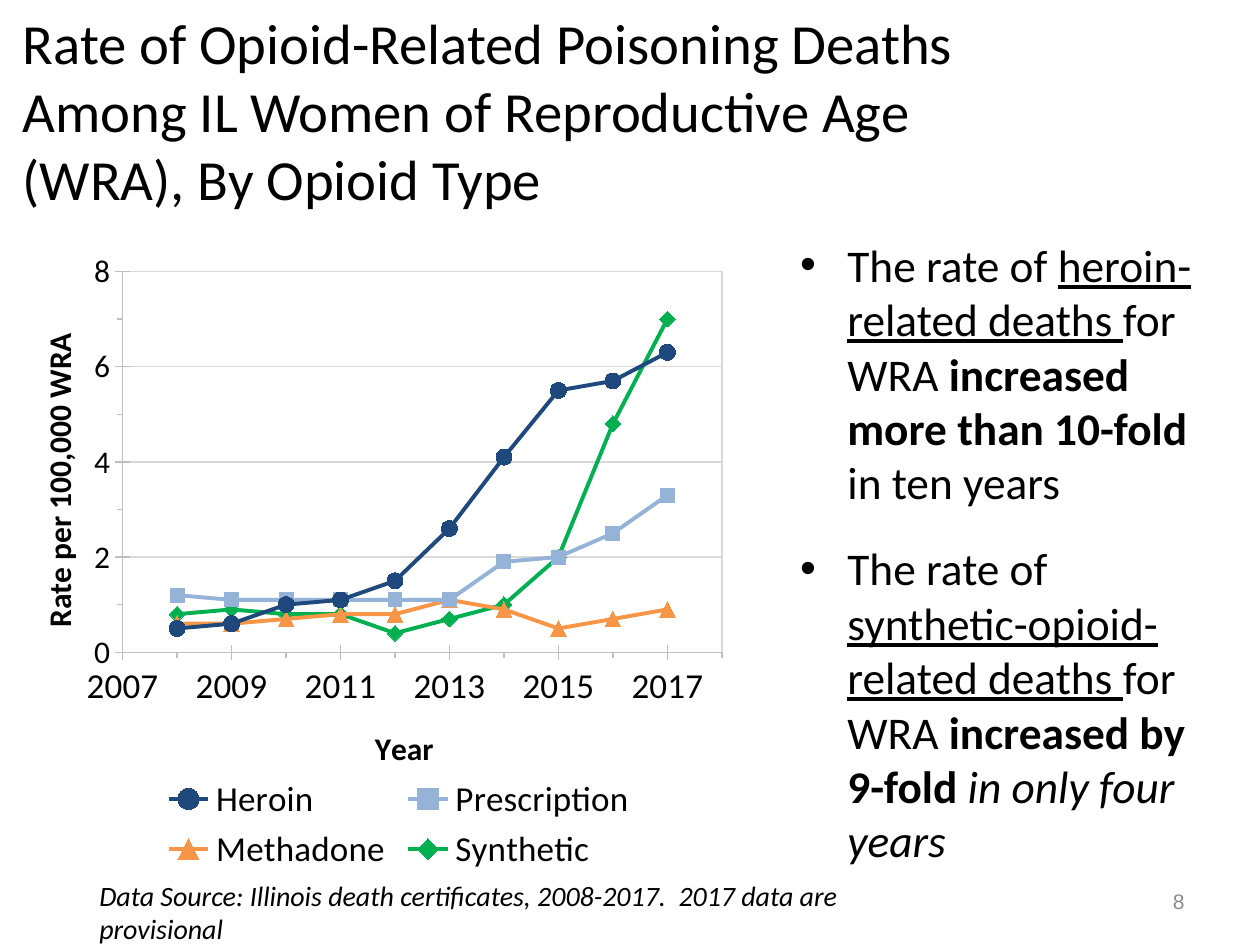
"""Build a slide on opioid poisoning death rates with a scatter chart and two findings."""
from lxml import etree
from pptx import Presentation, util as u
from pptx.chart.data import XyChartData
from pptx.dml.color import RGBColor
from pptx.enum import chart as ch, text
from pptx.oxml import parse_xml

NS = ('xmlns:c="http://schemas.openxmlformats.org/drawingml/2006/chart" '
      'xmlns:a="http://schemas.openxmlformats.org/drawingml/2006/main"')


def style(font, size, color="000000", name="Calibri", **flags):
    font.size, font.name = u.Pt(size), name
    font.color.rgb = RGBColor.from_string(color)
    for flag, value in flags.items():
        setattr(font, flag, value)


def write(paragraph, words, size, **format):
    run = paragraph.add_run()
    run.text = words
    style(run.font, size, **format)


deck = Presentation()
deck.slide_width, deck.slide_height = u.Inches(10), u.Inches(7.5)
slide = deck.slides.add_slide(deck.slide_layouts[1])
heading, findings = slide.placeholders
source = slide.shapes.add_textbox(0, 0, 0, 0)
number = slide.shapes.add_textbox(0, 0, 0, 0)

for part, place in ((heading, (0.08, 0.25, 9, 1.25)), (findings, (6.25, 1.83, 3.39, 4.9)),
                    (source, (0.69, 6.92, 6.37, 0.44)), (number, (7.17, 6.95, 2.33, 0.4))):
    part.left, part.top, part.width, part.height = map(u.Inches, place)
    part.text_frame.word_wrap = True
    part.text_frame.auto_size = text.MSO_AUTO_SIZE.NONE

headline = heading.text_frame.paragraphs[0]
headline.alignment = text.PP_ALIGN.LEFT
heading.text_frame.vertical_anchor = text.MSO_ANCHOR.MIDDLE
for row, words in enumerate(("Rate of Opioid-Related Poisoning Deaths ",
                             "Among IL Women of Reproductive Age ",
                             "(WRA), By Opioid Type")):
    if row:
        headline.add_line_break()
    write(headline, words, 32.4)

points = (
    (("The rate of ", {}), ("heroin-related deaths ", {"underline": True}), ("for WRA ", {}),
     ("increased more than 10-fold ", {"bold": True}), ("in ten years", {})),
    (("The rate of ", {}), ("synthetic-opioid-related deaths ", {"underline": True}),
     ("for WRA ", {}), ("increased by 9-fold ", {"bold": True}),
     ("in only four years", {"italic": True})),
)
for order, point in enumerate(points):
    finding = findings.text_frame.paragraphs[0] if order == 0 else findings.text_frame.add_paragraph()
    finding.space_before = u.Pt(18 * order)
    for words, format in point:
        write(finding, words, 25.9, **format)

write(source.text_frame.paragraphs[0],
      "Data Source: Illinois death certificates, 2008-2017.  2017 data are provisional",
      16, italic=True)
page = number.text_frame.paragraphs[0]
page.alignment = text.PP_ALIGN.RIGHT
number.text_frame.vertical_anchor = text.MSO_ANCHOR.MIDDLE
write(page, "8", 12, color="8C8C8C", name="Arial")

marks = ch.XL_MARKER_STYLE
opioids = (
    ("Heroin", "1F497D", marks.CIRCLE, 9, (0.5, 0.6, 1, 1.1, 1.5, 2.6, 4.1, 5.5, 5.7, 6.3)),
    ("Prescription", "95B3D7", marks.SQUARE, 8, (1.2, 1.1, 1.1, 1.1, 1.1, 1.1, 1.9, 2, 2.5, 3.3)),
    ("Methadone", "F79646", marks.TRIANGLE, 9, (0.6, 0.6, 0.7, 0.8, 0.8, 1.1, 0.9, 0.5, 0.7, 0.9)),
    ("Synthetic", "00B050", marks.DIAMOND, 9, (0.8, 0.9, 0.8, 0.8, 0.4, 0.7, 1, 2, 4.8, 7)),
)
rates = XyChartData()
for name, _, _, _, values in opioids:
    series = rates.add_series(name)
    for year, rate in enumerate(values, 2008):
        series.add_data_point(year, rate)
chart = slide.shapes.add_chart(ch.XL_CHART_TYPE.XY_SCATTER_LINES, u.Inches(0.25), u.Inches(1.82),
                               u.Inches(5.83), u.Inches(5.15), rates).chart
style(chart.font, 20)
chart.has_title = False
chart.has_legend = True
chart.legend.position = ch.XL_LEGEND_POSITION.BOTTOM
chart.legend.include_in_layout = False
style(chart.legend.font, 20)
chart.plots[0].vary_by_categories = False

for series, (_, color, mark, size, _) in zip(chart.plots[0].series, opioids):
    series.smooth = False
    series.format.line.width = u.Pt(2.25)
    series.marker.style, series.marker.size = mark, size
    series.marker.format.fill.solid()
    for paint in (series.format.line.color, series.marker.format.fill.fore_color,
                  series.marker.format.line.color):
        paint.rgb = RGBColor.from_string(color)

for axis, label, low, high, size in ((chart.category_axis, "Year", 2007, 2018, 20),
                                     (chart.value_axis, "Rate per 100,000 WRA", 0, 8, 18)):
    axis.minimum_scale, axis.maximum_scale = low, high
    axis.major_unit, axis.minor_unit = 2, 1
    axis.major_tick_mark = ch.XL_TICK_MARK.CROSS
    axis.minor_tick_mark = ch.XL_TICK_MARK.OUTSIDE
    axis.tick_labels.number_format, axis.tick_labels.number_format_is_linked = "0", False
    style(axis.tick_labels.font, size)
    axis.format.line.color.rgb = RGBColor.from_string("BFBFBF")
    axis.format.line.width = u.Pt(0.75)
    write(axis.axis_title.text_frame.paragraphs[0], label, 18, bold=True)
chart.category_axis.has_major_gridlines = False
grid = chart.value_axis.major_gridlines.format.line
grid.color.rgb, grid.width = RGBColor.from_string("D9D9D9"), u.Pt(0.75)

area = chart.plots[0]._element.getparent()
for layout in area.findall("{*}layout"):
    area.remove(layout)
frame = "".join(f'<c:{tag} val="{share}"/>' for tag, share in (
    ("layoutTarget", "inner"), ("xMode", "edge"), ("yMode", "edge"),
    ("x", 0.124), ("y", 0.065), ("w", 0.816), ("h", 0.587)))
area.insert(0, parse_xml(f'<c:layout {NS}><c:manualLayout>{frame}</c:manualLayout></c:layout>'))
area.append(parse_xml(f'<c:spPr {NS}><a:noFill/><a:ln w="9525"><a:solidFill>'
                      '<a:srgbClr val="D9D9D9"/></a:solidFill></a:ln></c:spPr>'))
etree.cleanup_namespaces(area)

deck.save("out.pptx")
